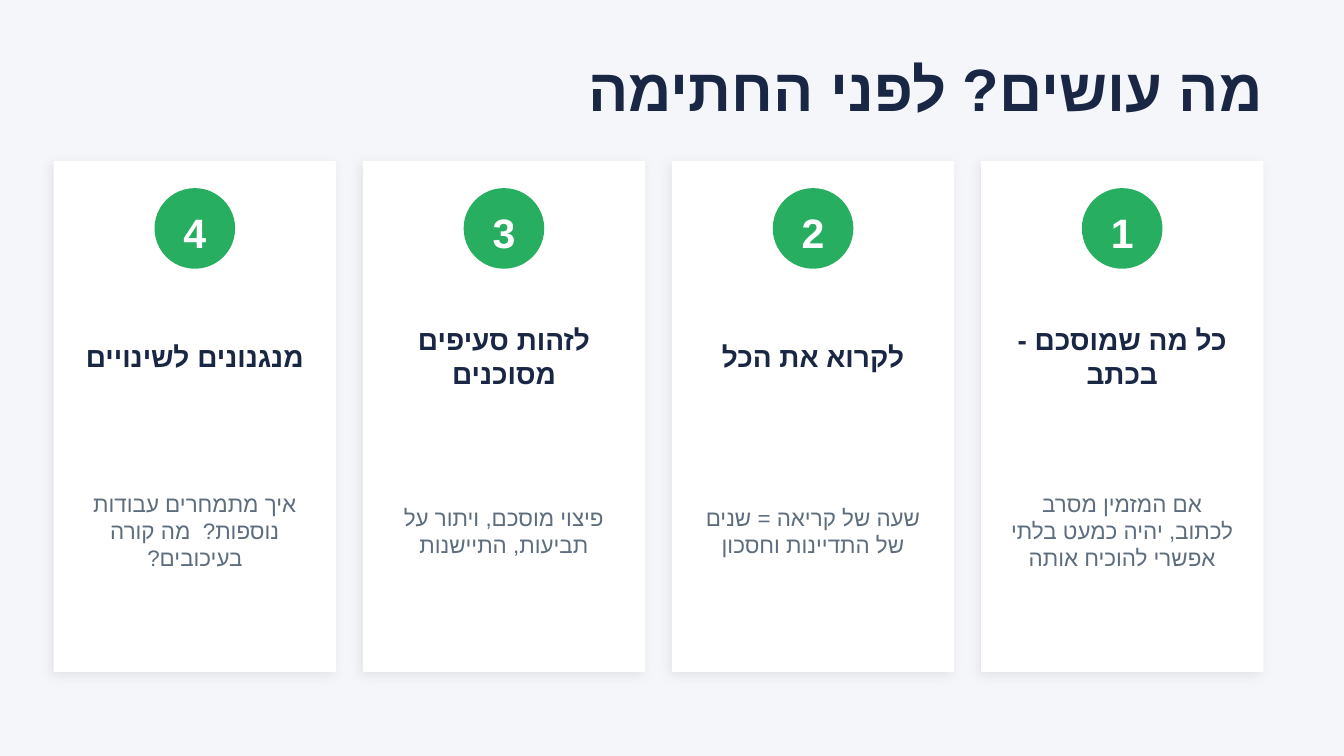
from lxml import etree
from pptx import Presentation
from pptx.dml.color import RGBColor
from pptx.enum import shapes, text
from pptx.oxml import ns
from pptx.util import Pt

NAVY = RGBColor(0x1A, 0x27, 0x44)
GREEN = RGBColor(0x27, 0xAE, 0x60)
SLATE = RGBColor(0x5D, 0x6D, 0x7E)
WHITE = RGBColor(0xFF, 0xFF, 0xFF)
MIST = RGBColor(0xF5, 0xF6, 0xFA)
FONT = "Arial"

TITLE_STYLE = {"size": Pt(32), "bold": True, "color": NAVY}
NUMBER_STYLE = {"size": Pt(22), "bold": True, "color": WHITE}
HEADING_STYLE = {"size": Pt(15), "bold": True, "color": NAVY}
DETAIL_STYLE = {"size": Pt(12), "bold": False, "color": SLATE}

TITLE = "מה עושים? לפני החתימה"
STEPS = [
    ("כל מה שמוסכם - בכתב", "אם המזמין מסרב לכתוב, יהיה כמעט בלתי אפשרי להוכיח אותה"),
    ("לקרוא את הכל", "שעה של קריאה = שנים של התדיינות וחסכון"),
    ("לזהות סעיפים מסוכנים", "פיצוי מוסכם, ויתור על תביעות, התיישנות"),
    ("מנגנונים לשינויים", "איך מתמחרים עבודות נוספות?  מה קורה בעיכובים?"),
]


def write(box, words, style, align=text.PP_ALIGN.CENTER, rtl=True):
    frame = box.text_frame
    settings = {
        "word_wrap": True,
        "auto_size": text.MSO_AUTO_SIZE.NONE,
        "vertical_anchor": text.MSO_ANCHOR.MIDDLE,
    }
    for name, value in settings.items():
        setattr(frame, name, value)
    para = frame.paragraphs[0]
    para.alignment = align
    if rtl:
        para._p.get_or_add_pPr().set("rtl", "1")
    span = para.add_run()
    span.text = words
    span.font.name = FONT
    for name, value in style.items():
        if name == "color":
            span.font.color.rgb = value
        else:
            setattr(span.font, name, value)
    for tag in ("a:ea", "a:cs"):
        etree.SubElement(span.font._element, ns.qn(tag), typeface=FONT)


def add_label(page, left, top, width, height, words, style, rtl=True):
    box = page.shapes.add_textbox(left, top, width, height)
    write(box, words, style, rtl=rtl)


def add_filled(page, kind, left, top, width, height, color):
    shape = page.shapes.add_shape(kind, left, top, width, height)
    shape.fill.solid()
    shape.fill.fore_color.rgb = color
    shape.line.fill.background()
    shape.shadow.inherit = False
    return shape


def add_soft_shadow(shape):
    effects = shape._element.spPr.find(ns.qn("a:effectLst"))
    shadow = etree.SubElement(
        effects, ns.qn("a:outerShdw"), blurRad=str(Pt(6)), dist=str(Pt(2)),
        dir=str(135 * 60000), algn="bl", rotWithShape="0")
    black = etree.SubElement(shadow, ns.qn("a:srgbClr"), val="000000")
    etree.SubElement(black, ns.qn("a:alpha"), val="8000")


def add_title(page, left, top, width, height):
    title = page.shapes.title
    frame = {"left": left, "top": top, "width": width, "height": height}
    for name, value in frame.items():
        setattr(title, name, value)
    write(title, TITLE, TITLE_STYLE, align=text.PP_ALIGN.RIGHT)


def add_card(page, left, top, width, height, number, heading, detail):
    kinds = shapes.MSO_SHAPE
    card = add_filled(page, kinds.RECTANGLE, left, top, width, height, WHITE)
    add_soft_shadow(card)

    badge = Pt(43.2)
    badge_left = left + (width - badge) // 2
    badge_top = top + Pt(14.4)
    add_filled(page, kinds.OVAL, badge_left, badge_top, badge, badge, GREEN)
    add_label(page, badge_left, badge_top + Pt(3.6), badge, Pt(39.6),
              str(number), NUMBER_STYLE, rtl=False)

    margin = Pt(7.2)
    inner = width - 2 * margin
    add_label(page, left + margin, top + Pt(72), inner, Pt(64.8), heading, HEADING_STYLE)
    add_label(page, left + margin, top + Pt(136.8), inner, Pt(122.4), detail, DETAIL_STYLE)


def add_steps(page, left, top, width, height):
    gap = Pt(14.4)
    card_width = (width - gap * (len(STEPS) - 1)) // len(STEPS)
    for index, (heading, detail) in enumerate(STEPS):
        card_left = left + width - card_width - index * (card_width + gap)
        add_card(page, card_left, top, card_width, height, index + 1, heading, detail)


def main():
    deck = Presentation()
    deck.slide_width, deck.slide_height = Pt(720), Pt(405)
    page = deck.slides.add_slide(deck.slide_layouts.get_by_name("Title Only"))
    page.background.fill.solid()
    page.background.fill.fore_color.rgb = MIST
    add_title(page, Pt(36), Pt(21.6), Pt(648), Pt(50.4))
    add_steps(page, Pt(28.8), Pt(86.4), Pt(648), Pt(273.6))
    deck.save("out.pptx")


if __name__ == "__main__":
    main()
